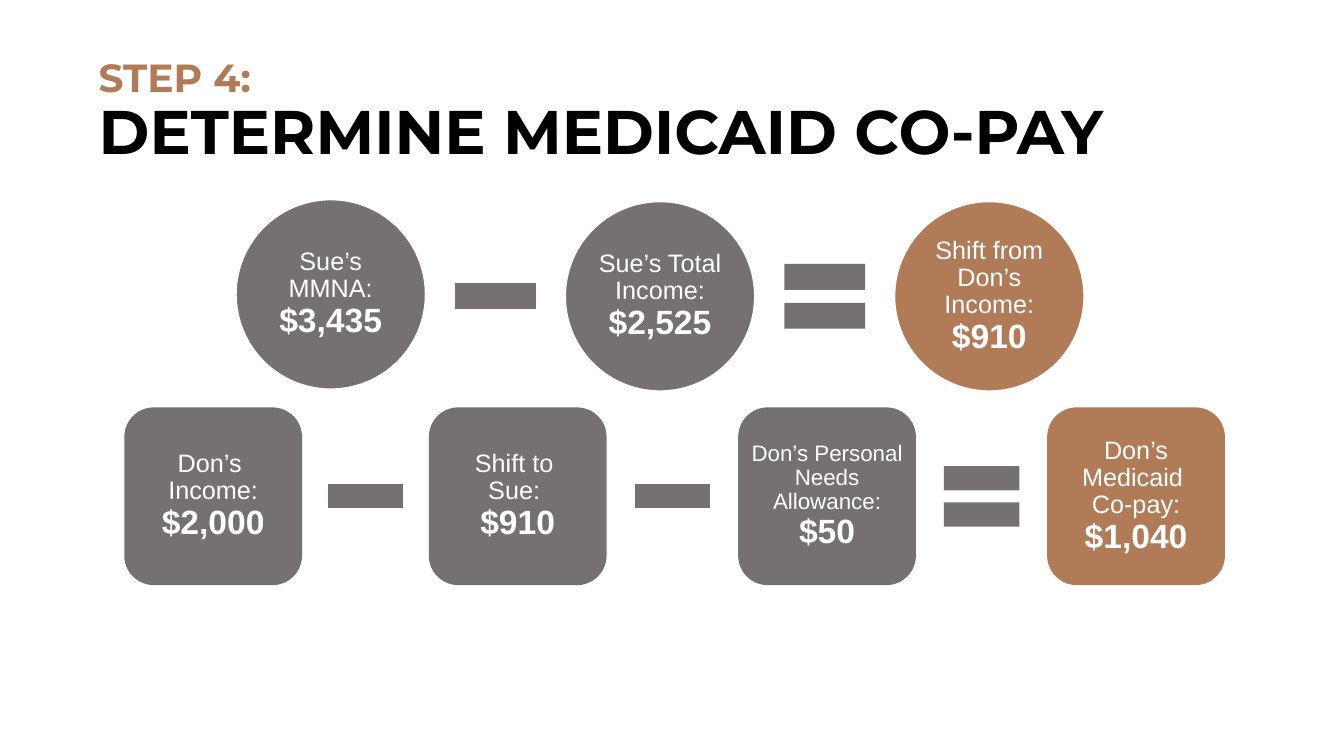
import pptx
import pptx.util
import pptx.dml.color
import pptx.enum.shapes
import pptx.enum.text

Pt = pptx.util.Pt
SHAPE = pptx.enum.shapes.MSO_SHAPE
GREY = pptx.dml.color.RGBColor(0x76, 0x71, 0x71)
COPPER = pptx.dml.color.RGBColor(0xB2, 0x7B, 0x57)
WHITE = pptx.dml.color.RGBColor(0xFF, 0xFF, 0xFF)
BLACK = pptx.dml.color.RGBColor(0x00, 0x00, 0x00)


def add_run(p, text, font, size, color, bold):
    r = p.add_run()
    r.text = text
    r.font.name = font
    r.font.size = Pt(size)
    r.font.color.rgb = color
    r.font.bold = bold


def add_shape(kind, left, top, size, color):
    sp = s.shapes.add_shape(kind, Pt(left), Pt(top), Pt(size), Pt(size))
    sp.shadow.inherit = False
    sp.fill.solid()
    sp.fill.fore_color.rgb = color
    sp.line.fill.background()
    return sp


prs = pptx.Presentation()
prs.slide_width = Pt(960)
prs.slide_height = Pt(540)
s = prs.slides.add_slide(prs.slide_layouts[6])

title = s.shapes.add_textbox(Pt(63.4), Pt(28.8), Pt(831), Pt(104.4))
tf = title.text_frame
tf.word_wrap = True
tf.vertical_anchor = pptx.enum.text.MSO_ANCHOR.MIDDLE
p = tf.paragraphs[0]
p.line_spacing = 0.9
add_run(p, "STEP 4:", "Montserrat", 28, COPPER, True)
p.add_line_break()
add_run(p, "DETERMINE MEDICAID CO-PAY", "Montserrat", 44, BLACK, True)

equations = [
    (SHAPE.ROUNDED_RECTANGLE, 127, 73.5, [
        (88.8, 291, ["Don’s ", "Income:"], 18, "$2,000"),
        (306.3, 291, ["Shift to ", "Sue: "], 18, "$910"),
        (527.3, 291, ["Don’s Personal Needs Allowance:"], 16, "$50"),
        (748, 291, ["Don’s Medicaid ", "Co-pay:"], 18, "$1,040"),
    ]),
    (SHAPE.OVAL, 135.3, 78.5, [
        (168.6, 142.6, ["Sue’s MMNA:"], 18, "$3,435"),
        (403.8, 144, ["Sue’s Total Income:"], 18, "$2,525"),
        (639, 144, ["Shift from Don’s Income:"], 18, "$910"),
    ]),
]

for kind, size, sign_size, terms in equations:
    result = len(terms) - 1
    for i, (left, top, label, label_size, amount) in enumerate(terms):
        sp = add_shape(kind, left, top, size, COPPER if i == result else GREY)
        if kind == SHAPE.OVAL:
            sp.line.color.rgb = WHITE
            sp.line.width = Pt(1)
        tf = sp.text_frame
        tf.word_wrap = True
        tf.vertical_anchor = pptx.enum.text.MSO_ANCHOR.MIDDLE
        tf.margin_left = tf.margin_right = tf.margin_top = tf.margin_bottom = Pt(2)
        p = tf.paragraphs[0]
        p.alignment = pptx.enum.text.PP_ALIGN.CENTER
        p.line_spacing = 0.9
        for line in label:
            add_run(p, line, "Arial", label_size, WHITE, False)
            p.add_line_break()
        add_run(p, amount, "Arial", 24, WHITE, True)

        if i < result:
            sign = SHAPE.MATH_EQUAL if i == result - 1 else SHAPE.MATH_MINUS
            gap_center = (left + size + terms[i + 1][0]) / 2
            sign_top = terms[result][1] + (size - sign_size) / 2
            add_shape(sign, gap_center - sign_size / 2, sign_top, sign_size, GREY)

prs.save("out.pptx")
